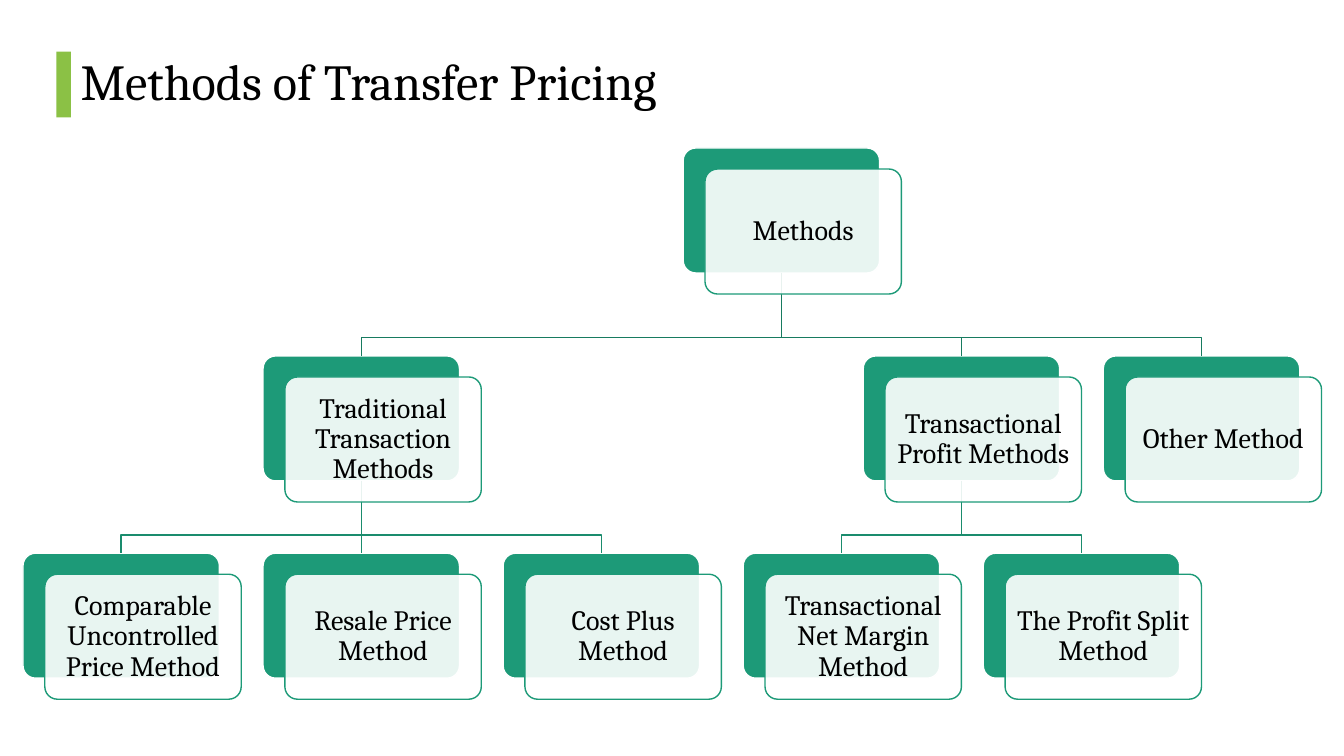
from lxml.etree import SubElement
from pptx import Presentation
from pptx.dml.color import RGBColor
from pptx.enum.shapes import MSO_CONNECTOR as Connector, MSO_SHAPE as Shape
from pptx.enum.text import MSO_ANCHOR as Anchor, PP_ALIGN as Align
from pptx.oxml.ns import qn
from pptx.util import Cm, Pt

TITLE = "Methods of Transfer Pricing"
METHODS = [
    ("Methods", 0, 2.75, None),
    ("Traditional Transaction Methods", 1, 1, "Methods"),
    ("Transactional Profit Methods", 1, 3.5, "Methods"),
    ("Other Method", 1, 4.5, "Methods"),
    ("Comparable Uncontrolled Price Method", 2, 0, "Traditional Transaction Methods"),
    ("Resale Price Method", 2, 1, "Traditional Transaction Methods"),
    ("Cost Plus Method", 2, 2, "Traditional Transaction Methods"),
    ("Transactional Net Margin Method", 2, 3, "Transactional Profit Methods"),
    ("The Profit Split Method", 2, 4, "Transactional Profit Methods"),
]

FONT = "Cambria"
BLACK = RGBColor(0x00, 0x00, 0x00)
WHITE = RGBColor(0xFF, 0xFF, 0xFF)
LIME = RGBColor(0x8B, 0xC1, 0x45)
GREEN = RGBColor(0x1D, 0x9A, 0x78)
LINE_COLORS = {1: RGBColor(0x17, 0x7B, 0x60), 2: RGBColor(0x1A, 0x8C, 0x6D)}

ROW_TOPS = [3.73, 8.97, 13.94]
FIRST_LEFT, COLUMN_STEP = 0.58, 6.05
BOX_WIDTH, BOX_HEIGHT = 4.95, 3.15
FRONT_RIGHT, FRONT_DOWN = 0.55, 0.53
BRANCH_RISE = 0.46


def write(shape, text, size, align):
    frame = shape.text_frame
    frame.word_wrap = True
    frame.vertical_anchor = Anchor.MIDDLE
    frame.text = text
    paragraph = frame.paragraphs[0]
    paragraph.alignment = align
    paragraph.line_spacing = 0.9
    font = paragraph.runs[0].font
    font.name, font.size = FONT, Pt(size)
    font.color.rgb = BLACK


def add_box(slide, left, top, fill, outline):
    box = slide.shapes.add_shape(
        Shape.ROUNDED_RECTANGLE, Cm(left), Cm(top), Cm(BOX_WIDTH), Cm(BOX_HEIGHT))
    box.adjustments[0] = 0.1
    box.shadow.inherit = False
    box.fill.solid()
    box.fill.fore_color.rgb = fill
    box.line.color.rgb = outline
    box.line.width = Pt(1)
    return box


def add_branch(slide, parent, child, color):
    start_x, end_x = (box.left + box.width // 2 for box in (parent, child))
    start_y = parent.top + parent.height
    if start_x == end_x:
        branch = slide.shapes.add_connector(
            Connector.STRAIGHT, start_x, start_y, end_x, child.top)
        branch.begin_connect(parent, 2)
        branch.end_connect(child, 0)
        SubElement(branch._element.spPr, qn("a:effectLst"))
    else:
        bend_y = child.top - Cm(BRANCH_RISE)
        builder = slide.shapes.build_freeform(start_x, start_y)
        builder.add_line_segments(
            [(start_x, bend_y), (end_x, bend_y), (end_x, child.top)], close=False)
        branch = builder.convert_to_shape()
        branch.fill.background()
        branch.shadow.inherit = False
    branch.line.color.rgb = color
    branch.line.width = Pt(1)


def add_front(slide, text, left, top):
    front = add_box(slide, left + FRONT_RIGHT, top + FRONT_DOWN, WHITE, GREEN)
    color = front._element.spPr.find(qn("a:solidFill")).find(qn("a:srgbClr"))
    SubElement(color, qn("a:alpha"), val="90000")
    frame = front.text_frame
    frame.margin_left = frame.margin_right = Cm(0.18)
    frame.margin_top = frame.margin_bottom = Cm(0.18)
    write(front, text, 20, Align.CENTER)


def main():
    presentation = Presentation()
    presentation.slide_width, presentation.slide_height = Cm(33.87), Cm(19.05)
    slide = presentation.slides.add_slide(presentation.slide_layouts[6])

    title = slide.shapes.add_textbox(Cm(1.78), Cm(0.56), Cm(30.3), Cm(3.15))
    write(title, TITLE, 36, Align.LEFT)
    accent = slide.shapes.add_shape(Shape.RECTANGLE, Cm(1.42), Cm(1.3), Cm(0.37), Cm(1.66))
    accent.shadow.inherit = False
    accent.fill.solid()
    accent.fill.fore_color.rgb = LIME
    accent.line.fill.background()

    places = {name: (FIRST_LEFT + column * COLUMN_STEP, ROW_TOPS[row])
              for name, row, column, _ in METHODS}
    backs = {name: add_box(slide, *place, GREEN, WHITE) for name, place in places.items()}
    for name, row, _, parent in METHODS:
        if parent:
            add_branch(slide, backs[parent], backs[name], LINE_COLORS[row])
    for name, place in places.items():
        add_front(slide, name, *place)

    presentation.save("out.pptx")


if __name__ == "__main__":
    main()
